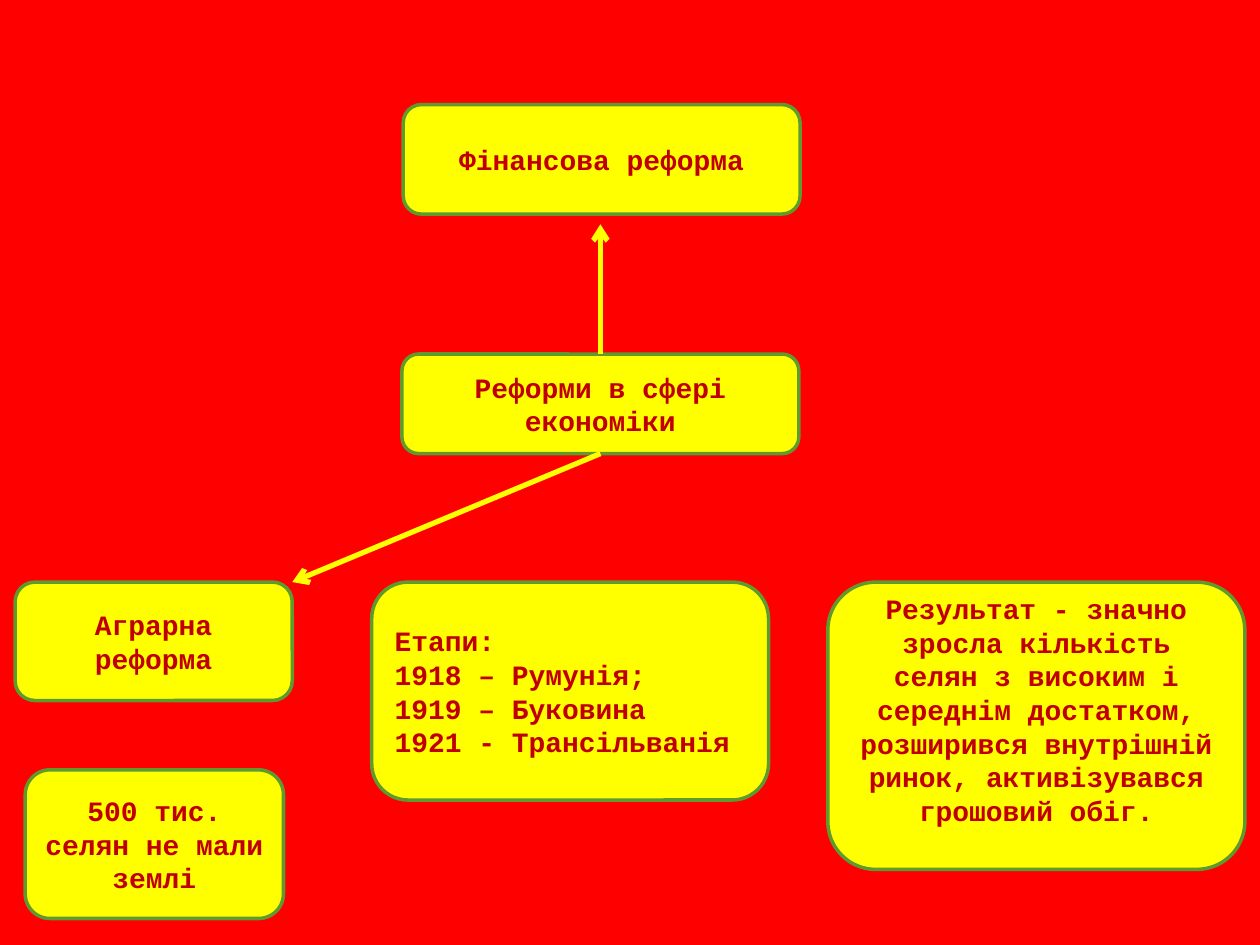
import pptx
import pptx.util
import pptx.dml.color
import pptx.enum.shapes
import pptx.enum.text
import pptx.oxml.ns
from lxml import etree

RED = pptx.dml.color.RGBColor(0xFF, 0x00, 0x00)
YELLOW = pptx.dml.color.RGBColor(0xFF, 0xFF, 0x00)
GREEN = pptx.dml.color.RGBColor(0x5E, 0x9B, 0x2C)
DARK = pptx.dml.color.RGBColor(0xC0, 0x00, 0x00)

FONT = "Courier New"
CELL = pptx.util.Inches(0.5)  # the slide is a grid of 20 columns by 15 rows
COLS, ROWS = 20, 15
ALIGN = pptx.enum.text.PP_ALIGN


def card(slide, box, place, lines, align=ALIGN.CENTER):
    """Rounded card; place is column, row, width, height within the box."""
    col, row, wide, high = place
    spot = [round(n * CELL) for n in (box[0] + col, box[1] + row, wide, high)]
    shape = slide.shapes.add_shape(
        pptx.enum.shapes.MSO_SHAPE.ROUNDED_RECTANGLE, *spot)
    shape.shadow.inherit = False
    shape.fill.solid()
    shape.fill.fore_color.rgb = YELLOW
    shape.line.color.rgb = GREEN
    shape.line.width = pptx.util.Pt(2)
    frame = shape.text_frame
    frame.word_wrap = True
    frame.vertical_anchor = pptx.enum.text.MSO_ANCHOR.MIDDLE
    for i, line in enumerate(lines):
        par = frame.paragraphs[0] if i == 0 else frame.add_paragraph()
        par.alignment = align
        run = par.add_run()
        run.text = line
        run.font.name = FONT
        run.font.size = pptx.util.Pt(16)
        run.font.bold = True
        run.font.color.rgb = DARK
    return shape


def arrow(slide, start, end):
    """Yellow line with an open head at its end."""
    link = slide.shapes.add_connector(
        pptx.enum.shapes.MSO_CONNECTOR.STRAIGHT, *start, *end)
    link.line.color.rgb = YELLOW
    link.line.width = pptx.util.Pt(3)
    qn = pptx.oxml.ns.qn
    etree.SubElement(link.line._get_or_add_ln(), qn("a:tailEnd"), type="arrow")
    etree.SubElement(link._element.spPr, qn("a:effectLst"))


def centre(slide, box):
    """Main topic with the finance reform above it."""
    wide, high = box[2:]
    main = card(slide, box, (0, high - 1.58, wide, 1.58),
                ["Реформи в сфері економіки"])
    top = card(slide, box, (0.02, 0, wide, 1.74), ["Фінансова реформа"])
    return main, top


def land(slide, box):
    """Agrarian reform: causes, stages and result from left to right."""
    wide, high = box[2:]
    head = card(slide, box, (0, 0, 4.4, 1.88), ["Аграрна реформа"])
    card(slide, box, (5.66, 0, 6.3, 3.46),
         ["Етапи:", "1918 – Румунія;", "1919 – Буковина",
          "1921 - Трансільванія"], ALIGN.JUSTIFY)
    result = card(slide, box, (wide - 6.62, 0, 6.62, 4.56),
                  ["Результат - значно зросла кількість селян з високим і "
                   "середнім достатком, розширився внутрішній ринок, "
                   "активізувався грошовий обіг."])
    result.text_frame.margin_bottom = pptx.util.Inches(0.31)
    card(slide, box, (0.16, high - 2.36, 4.1, 2.36),
         ["500 тис. селян не мали землі"])
    return head


def main():
    deck = pptx.Presentation()
    deck.slide_width = COLS * CELL
    deck.slide_height = ROWS * CELL
    slide = deck.slides.add_slide(deck.slide_layouts[6])
    slide.background.fill.solid()
    slide.background.fill.fore_color.rgb = RED

    # Regions, in columns and rows
    core, top = centre(slide, (6.38, 1.66, 6.3, 5.54))
    head = land(slide, (0.24, 9.24, 19.52, 5.34))

    # Arrows from the main topic to both reforms
    mid = core.left + core.width // 2
    arrow(slide, (mid, core.top + core.height),
          (head.left + head.width, head.top))
    gap = pptx.util.Inches(0.08)
    arrow(slide, (mid, core.top), (mid, top.top + top.height + gap))

    deck.save("out.pptx")


if __name__ == "__main__":
    main()
